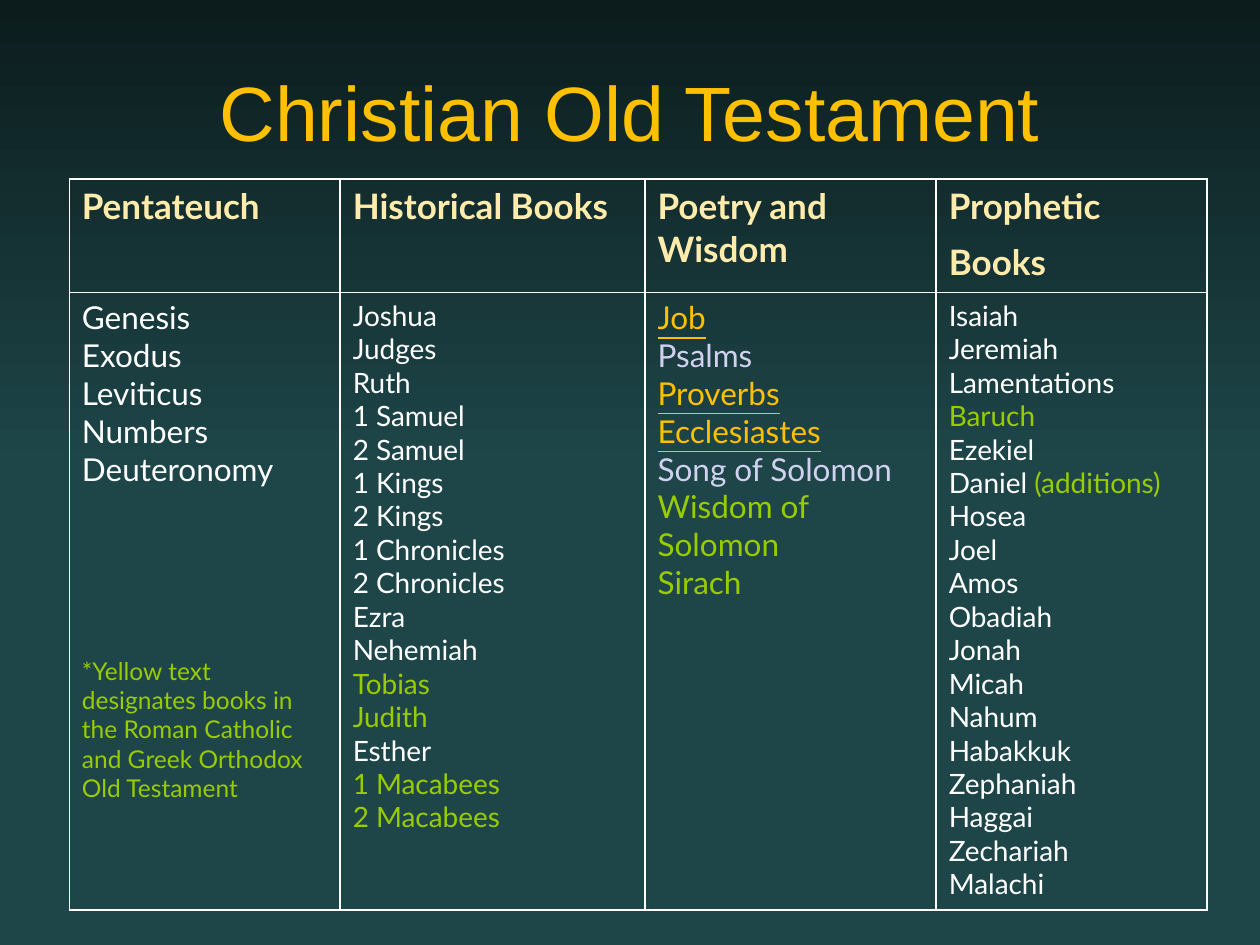
from copy import deepcopy
from dataclasses import dataclass

from lxml import etree
from pptx import Presentation
from pptx import util as u
from pptx.dml.color import RGBColor
from pptx.enum import text
from pptx.oxml import ns

GOLD = RGBColor(0xFF, 0xC0, 0x00)
CREAM = RGBColor(0xFF, 0xEB, 0xAB)
WHITE = RGBColor(0xFF, 0xFF, 0xFF)
LAVENDER = RGBColor(0xD1, 0xD1, 0xF0)
GREEN = RGBColor(0x99, 0xCC, 0x00)
DARK_TEAL = RGBColor(0x0C, 0x1C, 0x1D)
TEAL = RGBColor(0x1E, 0x46, 0x49)

ROW_HEIGHTS = (64.8, 352.8)
BORDER_TAGS = ("a:lnL", "a:lnR", "a:lnT", "a:lnB")


@dataclass(frozen=True)
class Run:
    words: str
    color: RGBColor = WHITE
    size: float = 16
    bold: bool = False
    underline: bool = False
    font: str = "Lato"


@dataclass(frozen=True)
class Line:
    runs: tuple[Run, ...]
    space_before: float = 0


@dataclass(frozen=True)
class Section:
    width: float
    heading: Line
    books: list[Line]


def heading(words: str, *extra: Run) -> Line:
    return Line((Run(words, CREAM, 20, bold=True), *extra))


def books(names: str, color: RGBColor = WHITE, size: float = 16, underline: bool = False) -> list[Line]:
    """One line for each comma-separated name."""
    return [Line((Run(name, color, size, underline=underline),)) for name in names.split(", ")]


FOOTNOTE = Line(
    (Run("*Yellow text designates books in the Roman Catholic and Greek Orthodox Old Testament", GREEN, 14),),
    space_before=96,
)

SECTIONS = [
    Section(
        154.8,
        heading("Pentateuch"),
        books("Genesis, Exodus, Leviticus, Numbers, Deuteronomy", size=18) + [FOOTNOTE],
    ),
    Section(
        174.2,
        heading("Historical Books"),
        books("Joshua, Judges, Ruth, 1 Samuel, 2 Samuel, 1 Kings, 2 Kings")
        + books("1 Chronicles, 2 Chronicles, Ezra, Nehemiah")
        + books("Tobias, Judith", GREEN)
        + books("Esther")
        + books("1 Macabees, 2 Macabees", GREEN),
    ),
    Section(
        166.4,
        heading("Poetry and Wisdom"),
        books("Job", GOLD, 18, underline=True)
        + books("Psalms", LAVENDER, 18)
        + books("Proverbs, Ecclesiastes", GOLD, 18, underline=True)
        + books("Song of Solomon", LAVENDER, 18)
        + books("Wisdom of, Solomon, Sirach", GREEN, 18),
    ),
    Section(
        154.8,
        heading("Prophetic Books", Run(" ", CREAM, 28)),
        books("Isaiah, Jeremiah, Lamentations")
        + books("Baruch", GREEN)
        + books("Ezekiel")
        + [Line((Run("Daniel "), Run("(additions)", GREEN)))]
        + books("Hosea, Joel, Amos, Obadiah, Jonah, Micah, Nahum")
        + books("Habakkuk, Zephaniah, Haggai, Zechariah, Malachi"),
    ),
]


def write_lines(frame, lines: list[Line], alignment=text.PP_ALIGN.LEFT) -> None:
    for index, line in enumerate(lines):
        paragraph = frame.paragraphs[0] if index == 0 else frame.add_paragraph()
        paragraph.alignment = alignment
        paragraph.space_before = u.Pt(line.space_before)
        for item in line.runs:
            run = paragraph.add_run()
            run.text = item.words
            run.font.name = item.font
            run.font.size = u.Pt(item.size)
            run.font.bold = item.bold
            run.font.underline = item.underline
            run.font.color.rgb = item.color


def add_borders(cell, color: RGBColor, width: float) -> None:
    properties = cell._tc.get_or_add_tcPr()
    for position, tag in enumerate(BORDER_TAGS):
        border = etree.Element(ns.qn(tag), w=str(u.Pt(width)))
        fill = etree.SubElement(border, ns.qn("a:solidFill"))
        etree.SubElement(fill, ns.qn("a:srgbClr"), val=str(color))
        properties.insert(position, border)


def fill_background(slide) -> None:
    """Dark at the top, reaching plain teal halfway down."""
    fill = slide.background.fill
    fill.gradient()
    fill.gradient_angle = 270
    stop_list = next(slide._element.iter(ns.qn("a:gsLst")))
    stop_list.append(deepcopy(stop_list[-1]))
    stops = ((0, DARK_TEAL), (0.5, TEAL), (1, TEAL))
    for stop, (position, color) in zip(fill.gradient_stops, stops):
        stop.position = position
        stop.color.rgb = color


def add_title(slide) -> None:
    title = slide.shapes.title
    title.left, title.top, title.width, title.height = map(u.Pt, (0, 30.2, 720, 66.2))
    title.text_frame.vertical_anchor = text.MSO_ANCHOR.MIDDLE
    words = Run("Christian Old Testament", GOLD, 44, font="Arial")
    write_lines(title.text_frame, [Line((words,))], text.PP_ALIGN.CENTER)


def add_book_table(slide) -> None:
    width = sum(section.width for section in SECTIONS)
    frame = slide.shapes.add_table(
        len(ROW_HEIGHTS), len(SECTIONS),
        u.Pt(39.6), u.Pt(102.2), u.Pt(width), u.Pt(sum(ROW_HEIGHTS)),
    )
    table = frame.table
    table.first_row = table.horz_banding = False
    for row, height in zip(table.rows, ROW_HEIGHTS):
        row.height = u.Pt(height)
    for column, section in enumerate(SECTIONS):
        table.columns[column].width = u.Pt(section.width)
        for row, lines in enumerate(([section.heading], section.books)):
            cell = table.cell(row, column)
            cell.fill.background()
            add_borders(cell, WHITE, 1)
            write_lines(cell.text_frame, lines)


def main() -> None:
    presentation = Presentation()
    presentation.slide_width, presentation.slide_height = u.Pt(720), u.Pt(540)
    slide = presentation.slides.add_slide(presentation.slide_layouts[5])
    fill_background(slide)
    add_title(slide)
    add_book_table(slide)
    presentation.save("out.pptx")


if __name__ == "__main__":
    main()
